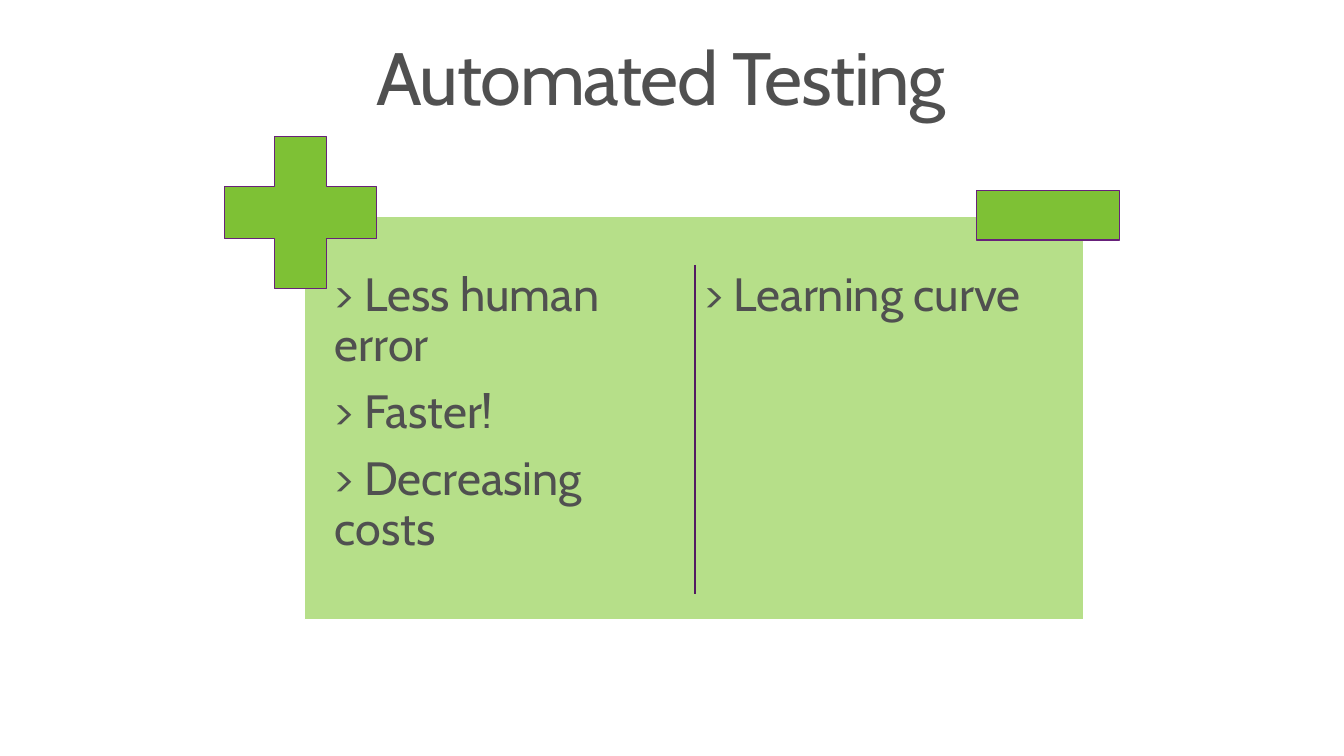
"""Build a slide weighing the pros and cons of automated testing."""
import dataclasses

import pptx
import pptx.dml.color
import pptx.enum.shapes
import pptx.enum.text
import pptx.oxml
import pptx.util

Cm = pptx.util.Cm
Pt = pptx.util.Pt
RGBColor = pptx.dml.color.RGBColor
ShapeType = pptx.enum.shapes.MSO_SHAPE


@dataclasses.dataclass(frozen=True)
class Theme:
    font: str = "Cabin"
    text: RGBColor = RGBColor(0x50, 0x50, 0x50)
    panel: RGBColor = RGBColor(0xB6, 0xDF, 0x89)
    panel_edge: RGBColor = RGBColor(0xFF, 0xFF, 0xFF)
    sign: RGBColor = RGBColor(0x7E, 0xC1, 0x35)
    sign_edge: RGBColor = RGBColor(0x68, 0x21, 0x7A)
    divider: RGBColor = RGBColor(0x53, 0x1A, 0x62)
    title_size: Pt = Pt(54)
    body_size: Pt = Pt(34)
    paragraph_gap: Pt = Pt(12)
    line_width: Pt = Pt(0.85)


def apply_format(target, values):
    for name, value in values.items():
        setattr(target, name, value)


class SlideBuilder:
    def __init__(self, slide, theme):
        self.slide = slide
        self.theme = theme

    def add_text(self, lines, box, size, insets, gap=Pt(0), tracking=0):
        frame = self.slide.shapes.add_textbox(*map(Cm, box)).text_frame
        horizontal, vertical = map(Cm, insets)
        apply_format(frame, {
            "word_wrap": True,
            "vertical_anchor": pptx.enum.text.MSO_ANCHOR.TOP,
            "margin_left": horizontal, "margin_right": horizontal,
            "margin_top": vertical, "margin_bottom": vertical,
        })
        for index, line in enumerate(lines):
            paragraph = frame.add_paragraph() if index else frame.paragraphs[0]
            apply_format(paragraph, {"line_spacing": 0.9, "space_after": gap})
            run = paragraph.add_run()
            run.text = line
            apply_format(run.font, {"name": self.theme.font, "size": size})
            run.font.color.rgb = self.theme.text
            if tracking:
                run._r.get_or_add_rPr().set("spc", str(tracking))

    def add_block(self, kind, box, fill, edge, adjustments=()):
        shape = self.slide.shapes.add_shape(kind, *map(Cm, box))
        shape.shadow.inherit = False
        shape.fill.solid()
        shape.fill.fore_color.rgb = fill
        shape.line.color.rgb = edge
        shape.line.width = self.theme.line_width
        for index, value in enumerate(adjustments):
            shape.adjustments[index] = value

    def add_divider(self, x, top, bottom):
        connector = self.slide.shapes.add_connector(
            pptx.enum.shapes.MSO_CONNECTOR.STRAIGHT, *map(Cm, (x, top, x, bottom)))
        connector.line.color.rgb = self.theme.divider
        connector.line.width = self.theme.line_width
        connector._element.spPr.append(pptx.oxml.parse_xml(
            '<a:effectLst xmlns:a="http://schemas.openxmlformats.org/drawingml/2006/main"/>'))


def main():
    presentation = pptx.Presentation()
    apply_format(presentation, {"slide_width": Cm(34.54), "slide_height": Cm(19.43)})
    theme = Theme()
    slide = presentation.slides.add_slide(presentation.slide_layouts[6])
    builder = SlideBuilder(slide, theme)

    builder.add_text(["Automated Testing"], (9.27, 0.81, 16, 2.54),
                     theme.title_size, (0.41, 0.25), tracking=-100)
    builder.add_block(ShapeType.RECTANGLE, (7.82, 5.56, 20.04, 10.36),
                      theme.panel, theme.panel_edge)

    columns = [
        ["> Less human error", "> Faster!", "> Decreasing costs"],
        ["> Learning curve"],
    ]
    for index, points in enumerate(columns):
        builder.add_text(points, (8.43 + 9.5 * index, 6.78, 9.3, 8.86),
                         theme.body_size, (0.18, 0.18), theme.paragraph_gap)

    signs = [
        (ShapeType.CROSS, (5.77, 3.51, 3.91, 3.91), [0.33]),
        (ShapeType.RECTANGLE, (25.1, 4.9, 3.68, 1.27), []),
    ]
    for kind, box, adjustments in signs:
        builder.add_block(kind, box, theme.sign, theme.sign_edge, adjustments)
    builder.add_divider(17.86, 6.81, 15.27)

    presentation.save("out.pptx")


if __name__ == "__main__":
    main()
